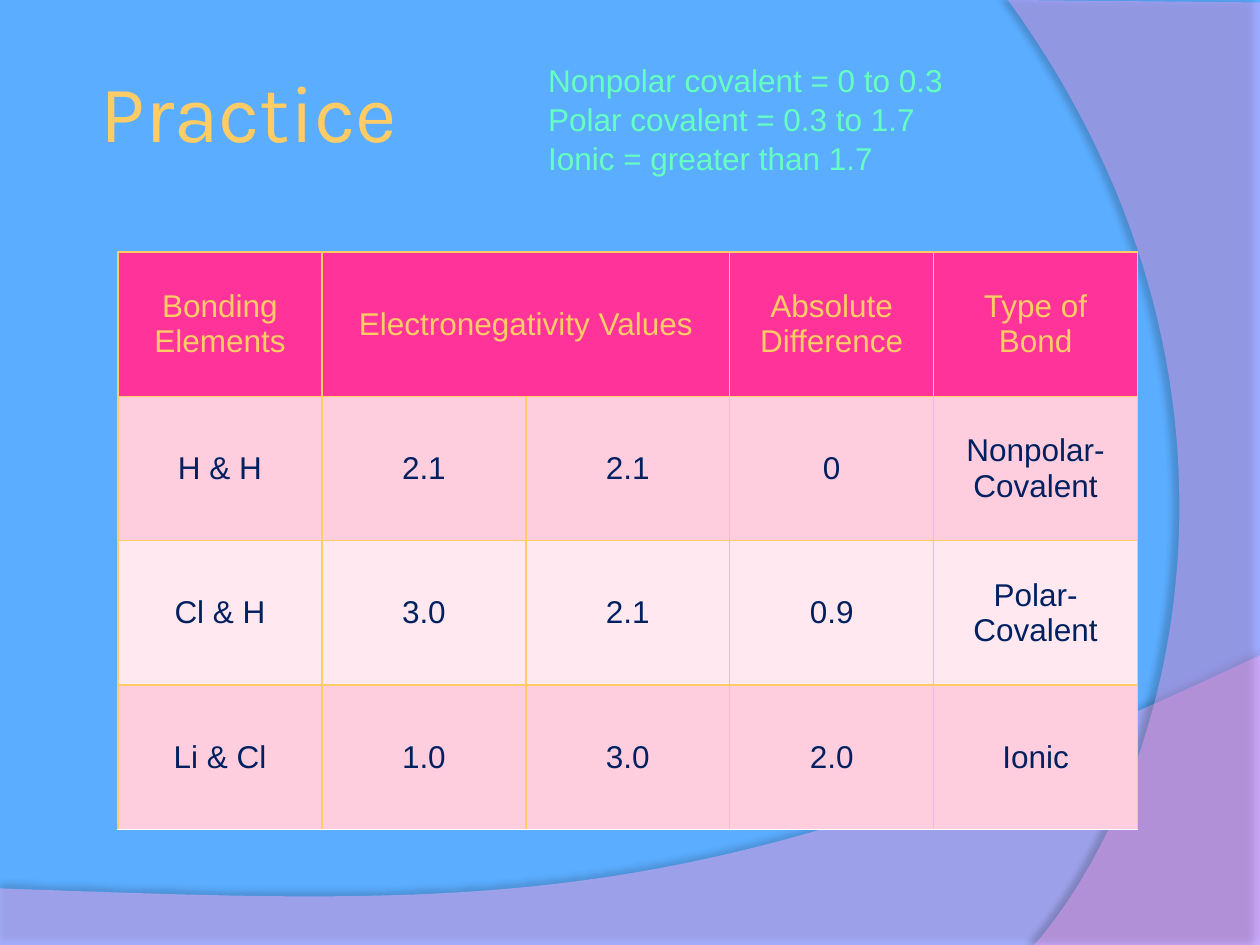
"""Build the bond type practice slide with its electronegativity table."""
from lxml.etree import SubElement
from pptx import Presentation
from pptx.dml.color import RGBColor
from pptx.enum.text import MSO_ANCHOR as Anchor, PP_ALIGN as Align
from pptx.oxml.ns import qn
from pptx.util import Cm, Pt

COLORS = {
    "sky": "5BADFF", "gold": "FFCC66", "mint": "66FFC2", "navy": "002060",
    "header": "FF3399", "odd": "FFCEDE", "even": "FFE8EF", "shadow": "000000",
    "lower": "FFB4FF", "right": "FFA7FF",
}
TITLE = "Practice"
RULES = [
    "Nonpolar covalent = 0 to 0.3",
    "Polar covalent = 0.3 to 1.7",
    "Ionic = greater than 1.7",
]
ROWS = [
    ["Bonding Elements", "Electronegativity Values", "", "Absolute Difference", "Type of Bond"],
    ["H & H", "2.1", "2.1", "0", "Nonpolar- Covalent"],
    ["Cl & H", "3.0", "2.1", "0.9", "Polar-Covalent"],
    ["Li & Cl", "1.0", "3.0", "2.0", "Ionic"],
]
WAVES = [
    {"color": "lower", "opacity": 45, "shadow": (35, 3.5, 270),
     "corners": [(0, 17.91), (0, 19.08), (25.4, 19.08), (25.4, 13.21)],
     "curve": [(14.2, 18.52), (9.93, 18.26), (0, 17.91)]},
    {"color": "right", "opacity": 40, "shadow": (45, 4, 180),
     "corners": [(25.4, 0.05), (25.4, 19.05), (20.85, 19.05)],
     "curve": [(23.75, 15.72), (25.86, 7.62), (20.32, 0)]},
]
COLUMN_WIDTH, ROW_HEIGHT = Cm(4.11), Cm(2.91)
CURVE_STEPS = 60


def rgb(name):
    return RGBColor.from_string(COLORS[name])


def set_font(para, name, size, color):
    para.font.name, para.font.size, para.font.bold = name, Pt(size), False
    para.font.color.rgb = rgb(color)


def bezier(points, t):
    weights = ((1 - t) ** 3, 3 * t * (1 - t) ** 2, 3 * t * t * (1 - t), t ** 3)
    return tuple(sum(w * p[axis] for w, p in zip(weights, points)) for axis in (0, 1))


def add_alpha(color_element, percent):
    SubElement(color_element, qn("a:alpha"), val=str(percent * 1000))


def add_wave(page, wave):
    controls = [wave["corners"][-1], *wave["curve"]]
    arc = [bezier(controls, step / CURVE_STEPS) for step in range(1, CURVE_STEPS + 1)]
    start, *rest = [(Cm(x), Cm(y)) for x, y in wave["corners"] + arc]
    builder = page.shapes.build_freeform(*start)
    builder.add_line_segments(rest, close=True)
    shape = builder.convert_to_shape()
    shape.fill.solid()
    shape.fill.fore_color.rgb = rgb(wave["color"])
    shape.line.fill.background()
    shape.shadow.inherit = False
    properties = shape.element.spPr
    add_alpha(properties.find(qn("a:solidFill")).find(qn("a:srgbClr")), wave["opacity"])
    opacity, distance, angle = wave["shadow"]
    shadow = SubElement(properties.find(qn("a:effectLst")), qn("a:outerShdw"),
                        blurRad=str(Pt(4)), dist=str(Pt(distance)),
                        dir=str(angle * 60000), algn="ctr", rotWithShape="0")
    add_alpha(SubElement(shadow, qn("a:srgbClr"), val=COLORS["shadow"]), opacity)


def add_text(page, frame, lines, font, anchor, inset, spacing):
    box = page.shapes.add_textbox(*map(Cm, frame)).text_frame
    box.word_wrap, box.vertical_anchor = True, anchor
    box.margin_left = box.margin_right = Cm(inset)
    box.text = "\n".join(lines)
    for para in box.paragraphs:
        para.line_spacing = spacing
        set_font(para, *font)


def add_borders(cell, sides):
    for side in sides:
        line = SubElement(cell._tc.get_or_add_tcPr(), qn(f"a:ln{side}"), w=str(Pt(1)))
        fill = SubElement(line, qn("a:solidFill"))
        SubElement(fill, qn("a:srgbClr"), val=COLORS["gold"])


def add_bond_table(page):
    row_count, column_count = len(ROWS), len(ROWS[0])
    table = page.shapes.add_table(
        row_count, column_count, Cm(2.38), Cm(5.08),
        COLUMN_WIDTH * column_count, ROW_HEIGHT * row_count).table
    for column in table.columns:
        column.width = COLUMN_WIDTH
    for index, values in enumerate(ROWS):
        table.rows[index].height = ROW_HEIGHT
        band = "header" if index == 0 else "odd" if index % 2 else "even"
        for cell, value in zip(table.rows[index].cells, values):
            cell.text = value
            cell.vertical_anchor = Anchor.MIDDLE
            add_borders(cell, "LRT" if index == row_count - 1 else "LRTB")
            cell.fill.solid()
            cell.fill.fore_color.rgb = rgb(band)
            para = cell.text_frame.paragraphs[0]
            para.alignment = Align.CENTER
            set_font(para, "Arial", 18, "navy" if index else "gold")
    table.cell(0, 1).merge(table.cell(0, 2))


def main():
    deck = Presentation()
    deck.slide_width, deck.slide_height = Cm(25.4), Cm(19.05)
    page = deck.slides.add_slide(deck.slide_layouts[6])
    page.background.fill.solid()
    page.background.fill.fore_color.rgb = rgb("sky")
    for wave in WAVES:
        add_wave(page, wave)
    add_text(page, (1.9, 0.64, 21.6, 3.18), [TITLE], ("Karla", 46, "gold"),
             Anchor.MIDDLE, 0.13, 1.0)
    add_bond_table(page)
    add_text(page, (10.8, 1.07, 13.77, 3.33), RULES, ("Arial", 18, "mint"),
             Anchor.TOP, 0.25, 1.04)
    deck.save("out.pptx")


if __name__ == "__main__":
    main()
